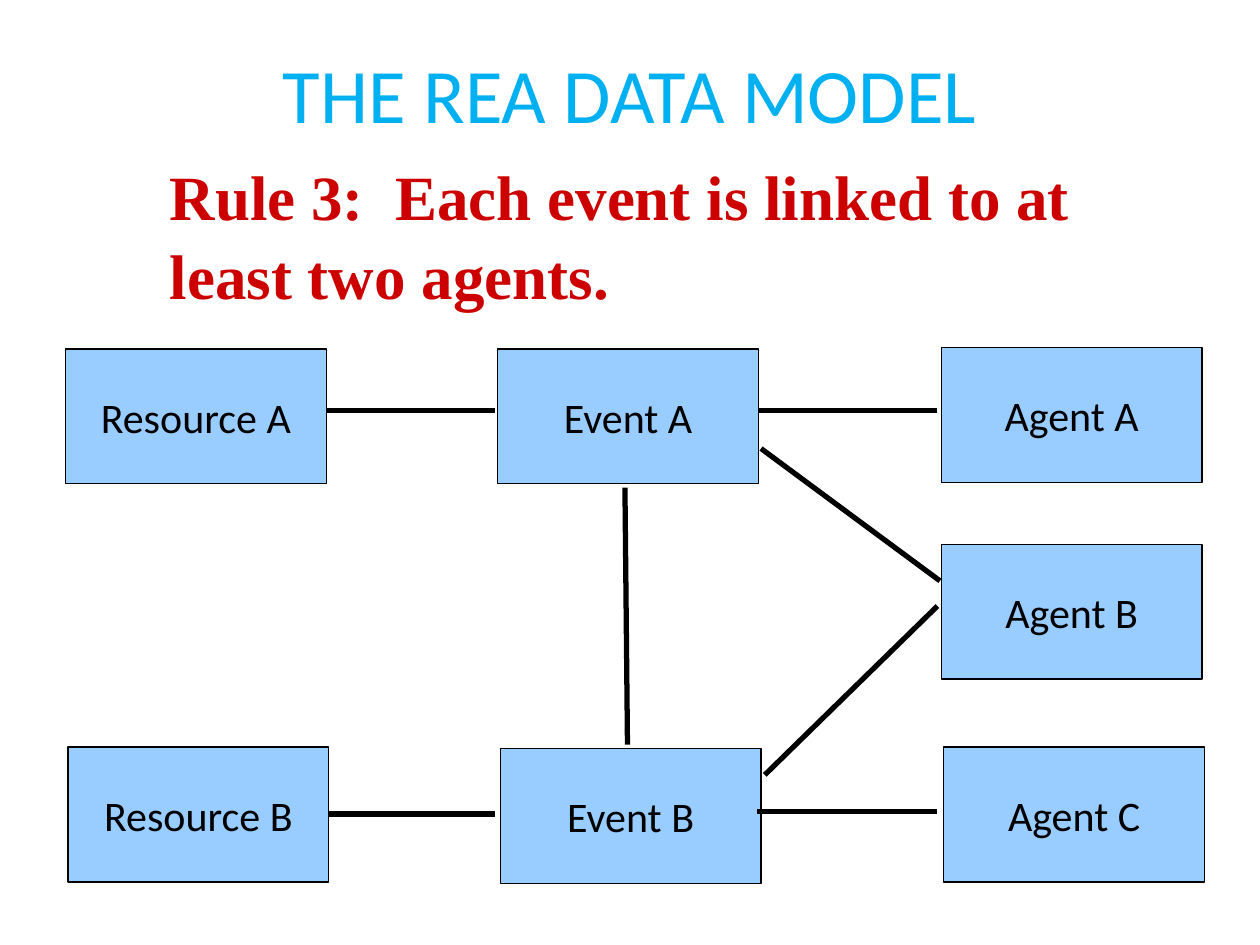
from lxml import etree
from pptx import Presentation
from pptx.dml.color import RGBColor
from pptx.enum import shapes, text
from pptx.oxml.ns import qn
from pptx.util import Inches, Pt

TITLE = "THE REA DATA MODEL"
RULE = "Rule 3:  Each event is linked to at least two agents."
BOX_SIZE = (2.07, 1.07)
BOXES = [  # label, left, top
    ("Agent A", 7.47, 2.76),
    ("Agent B", 7.47, 4.32),
    ("Agent C", 7.49, 5.93),
    ("Event A", 3.95, 2.77),
    ("Event B", 3.97, 5.94),
    ("Resource A", 0.52, 2.77),
    ("Resource B", 0.54, 5.93),
]
LINKS = [  # from x, y, to x, y
    (6.02, 3.26, 7.44, 3.26),  # Event A - Agent A
    (6.01, 6.44, 7.44, 6.44),  # Event B - Agent C
    (6.07, 6.15, 7.44, 4.81),  # Event B - Agent B
    (4.96, 3.87, 4.98, 5.91),  # Event A - Event B
    (2.59, 3.26, 3.93, 3.26),  # Resource A - Event A
    (2.61, 6.46, 3.93, 6.46),  # Resource B - Event B
    (6.04, 3.56, 7.46, 4.61),  # Event A - Agent B
]
THEME = {
    "title": ("Calibri", 44, "00B0F0", False),
    "rule": ("Times New Roman", 36, "CC0000", True),
    "box": ("Calibri", 24, "000000", False),
    "fill": "99CCFF",
    "line": "000000",
    "border": 0.75,
    "link": 3,
}


def color(key):
    return RGBColor.from_string(THEME[key])


def write(p, words, style, align):
    name, size, rgb, bold = THEME[style]
    p.alignment = align
    r = p.add_run()
    r.text = words
    r.font.name, r.font.size, r.font.bold = name, Pt(size), bold
    r.font.color.rgb = RGBColor.from_string(rgb)


def add_title(s):
    sp = s.shapes.title
    sp.left, sp.top, sp.width, sp.height = map(Inches, (0.5, 0.3, 9, 0.87))
    tf = sp.text_frame
    tf.vertical_anchor = text.MSO_ANCHOR.MIDDLE
    write(tf.paragraphs[0], TITLE, "title", text.PP_ALIGN.CENTER)


def add_box(s, label, left, top):
    sp = s.shapes.add_shape(shapes.MSO_SHAPE.RECTANGLE,
                            *map(Inches, (left, top, *BOX_SIZE)))
    sp.shadow.inherit = False
    sp.fill.solid()
    sp.fill.fore_color.rgb = color("fill")
    sp.line.color.rgb = color("line")
    sp.line.width = Pt(THEME["border"])
    tf = sp.text_frame
    tf.word_wrap = False
    tf.vertical_anchor = text.MSO_ANCHOR.MIDDLE
    write(tf.paragraphs[0], label, "box", text.PP_ALIGN.CENTER)


def add_link(s, *ends):
    line = s.shapes.add_connector(shapes.MSO_CONNECTOR.STRAIGHT, *map(Inches, ends))
    line.line.color.rgb = color("line")
    line.line.width = Pt(THEME["link"])
    etree.SubElement(line._element.spPr, qn("a:effectLst"))


def add_rule(s):
    sp = s.shapes.add_textbox(*map(Inches, (0.25, 1.17, 9.33, 1.31)))
    tf = sp.text_frame
    tf.word_wrap = True
    tf.auto_size = text.MSO_AUTO_SIZE.SHAPE_TO_FIT_TEXT
    p = tf.paragraphs[0]
    p.level = 2
    p.line_spacing = 1.05
    pPr = p._p.get_or_add_pPr()
    pPr.set("marL", str(Inches(1)))
    pPr.set("indent", "0")
    write(p, RULE, "rule", text.PP_ALIGN.LEFT)


def main():
    prs = Presentation()
    prs.slide_width, prs.slide_height = Inches(10), Inches(7.5)
    s = prs.slides.add_slide(prs.slide_layouts[5])
    add_title(s)
    for box in BOXES:
        add_box(s, *box)
    for link in LINKS:
        add_link(s, *link)
    add_rule(s)
    prs.save("out.pptx")


if __name__ == "__main__":
    main()
